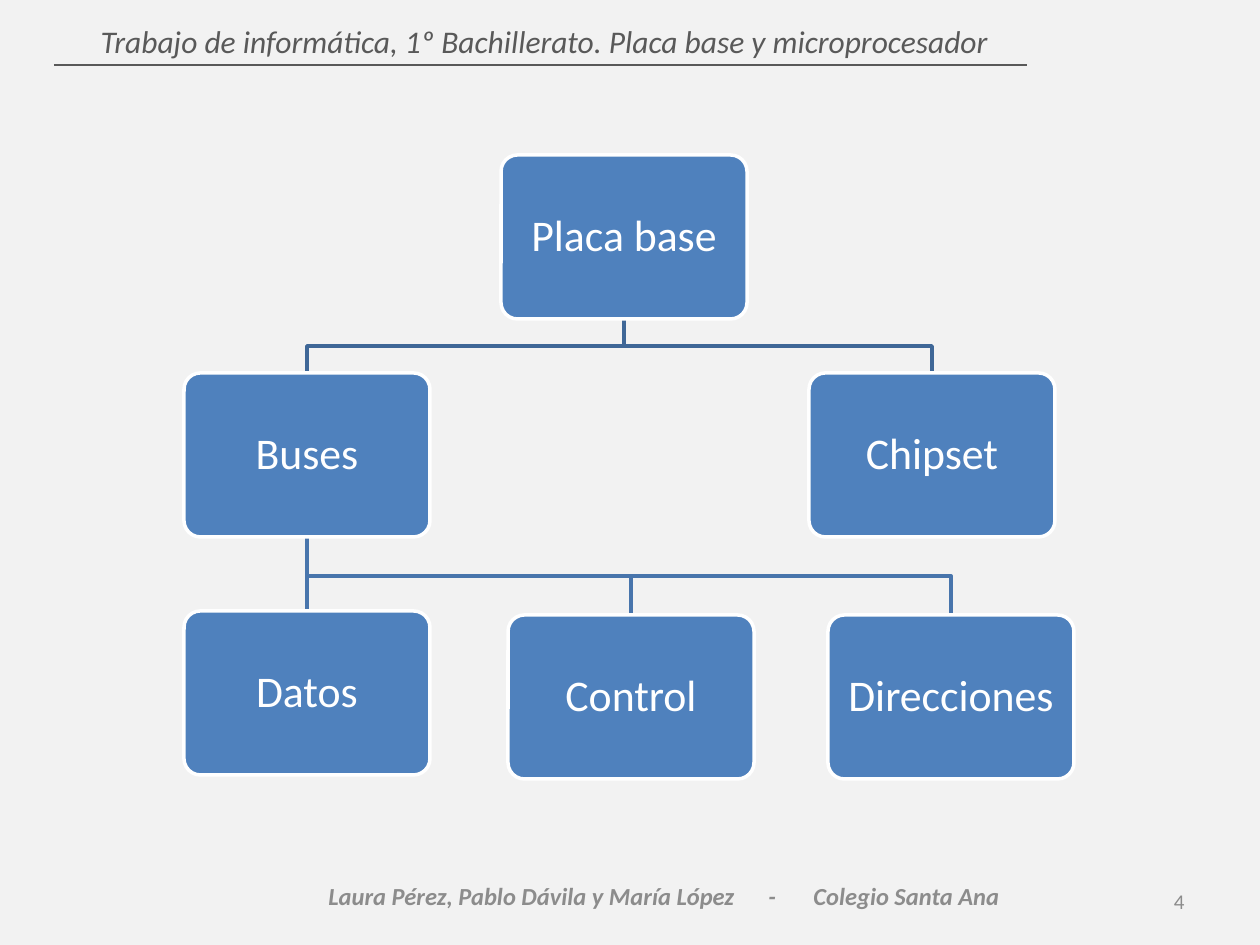
from dataclasses import dataclass

from lxml.etree import SubElement
from pptx import Presentation
from pptx.dml.color import RGBColor
from pptx.enum.shapes import MSO_CONNECTOR, MSO_SHAPE
from pptx.enum.text import MSO_ANCHOR, MSO_AUTO_SIZE, PP_ALIGN
from pptx.oxml import parse_xml
from pptx.oxml.ns import nsdecls, qn
from pptx.util import Emu, Pt


@dataclass(frozen=True)
class Theme:
    """Colours, font and type sizes of the slide."""
    font: str = "Calibri"
    back: str = "F2F2F2"
    node: str = "4F81BD"
    white: str = "FFFFFF"
    upper_link: str = "3F6797"
    lower_link: str = "4875AC"
    header: str = "595959"
    footer: str = "8C8C8C"
    node_size: int = 25
    header_size: int = 18
    footer_size: int = 14
    number_size: int = 12


T = Theme()
NODE_W, NODE_H = 246, 164
NODES = {
    "Placa base": (317, 0),
    "Buses": (0, 218),
    "Chipset": (625, 218),
    "Datos": (0, 456),
    "Control": (324, 460),
    "Direcciones": (644, 460),
}
LINKS = [
    ("Placa base", ("Buses", "Chipset"), T.upper_link),
    ("Buses", ("Datos", "Control", "Direcciones"), T.lower_link),
]


def px(n):
    """Turn pixels into EMU."""
    return Emu(round(n * 914400 / 126))


def rgb(color):
    """Turn a hex string into a colour."""
    return RGBColor.from_string(color)


def add_run(p, text, size, color, bold=False, italic=False):
    """Add one styled run to a paragraph."""
    r = p.add_run()
    r.text = text
    r.font.name, r.font.size = T.font, Pt(size)
    r.font.bold, r.font.italic = bold, italic
    r.font.color.rgb = rgb(color)


def set_line(shape, color, width):
    """Set a solid outline."""
    shape.line.color.rgb = rgb(color)
    shape.line.width = Pt(width)


def add_link(s, x1, y1, x2, y2, color):
    """Join a parent's foot to a child's head, bending halfway."""
    mid = (y1 + y2) / 2
    if x1 == x2:
        fb = s.shapes.build_freeform(px(x1 - 6), px(y1))
        fb.move_to(px(x1), px(y1))
        fb.add_line_segments([(px(x2), px(y2))], close=False)
        fb.move_to(px(x1 + 6), px(y2))
    else:
        fb = s.shapes.build_freeform(px(x1), px(y1))
        fb.add_line_segments([(px(x1), px(mid)), (px(x2), px(mid)), (px(x2), px(y2))],
                             close=False)
    sp = fb.convert_to_shape()
    sp.shadow.inherit = False
    sp.fill.background()
    set_line(sp, color, 2)


def add_node(s, x, y, label):
    """Draw one labelled box."""
    sp = s.shapes.add_shape(MSO_SHAPE.ROUNDED_RECTANGLE, px(x), px(y), px(NODE_W), px(NODE_H))
    sp.adjustments[0] = 0.1
    sp.shadow.inherit = False
    sp.fill.solid()
    sp.fill.fore_color.rgb = rgb(T.node)
    set_line(sp, T.white, 2)
    tf = sp.text_frame
    tf.word_wrap = True
    tf.vertical_anchor = MSO_ANCHOR.MIDDLE
    p = tf.paragraphs[0]
    p.alignment = PP_ALIGN.CENTER
    p.line_spacing = 0.9
    add_run(p, label, T.node_size, T.white)


def add_tree(s, x, y):
    """Draw the links, then the boxes, of the hierarchy."""
    for parent, children, color in LINKS:
        parent_x, parent_y = NODES[parent]
        for child in children:
            child_x, child_y = NODES[child]
            add_link(s, x + parent_x + NODE_W / 2, y + parent_y + NODE_H,
                     x + child_x + NODE_W / 2, y + child_y, color)
    for label, (dx, dy) in NODES.items():
        add_node(s, x + dx, y + dy, label)


def add_header(s, x, y, w, h):
    """Place the title and the rule under it."""
    title = s.shapes.title
    title.left, title.top, title.width, title.height = px(x), px(y), px(w), px(h)
    tf = title.text_frame
    tf.word_wrap = False
    tf.auto_size = MSO_AUTO_SIZE.SHAPE_TO_FIT_TEXT
    tf.vertical_anchor = MSO_ANCHOR.TOP
    p = tf.paragraphs[0]
    p.alignment = PP_ALIGN.LEFT
    add_run(p, "Trabajo de informática, 1º Bachillerato. Placa base y microprocesador",
            T.header_size, T.header, italic=True)
    rule = s.shapes.add_connector(MSO_CONNECTOR.STRAIGHT, px(x - 34), px(y + h - 1),
                                  px(x + w + 20), px(y + h - 1))
    SubElement(rule._element.spPr, qn("a:effectLst"))
    set_line(rule, T.header, 0.75)


def add_box(s, x, y, w, h):
    """Add a middle-anchored text box and return its paragraph."""
    tf = s.shapes.add_textbox(px(x), px(y), px(w), px(h)).text_frame
    tf.word_wrap = True
    tf.vertical_anchor = MSO_ANCHOR.MIDDLE
    return tf.paragraphs[0]


def add_footer(s, x, y, w, h):
    """Place the authors, the school and the slide number."""
    p = add_box(s, x, y, 704, h)
    tabs = SubElement(p._p.get_or_add_pPr(), qn("a:tabLst"))
    for stop in (440, 485):
        SubElement(tabs, qn("a:tab"), pos=str(px(stop)), algn="l")
    for text in ("Laura Pérez, Pablo Dávila y María López", "\t-", "\tColegio Santa Ana"):
        add_run(p, text, T.footer_size, T.footer, bold=True, italic=True)
    p = add_box(s, x + w - 294, y + 14, 294, 50)
    p.alignment = PP_ALIGN.RIGHT
    p._p.append(parse_xml(
        f'<a:fld {nsdecls("a")} id="{{B6F15528-21DE-4FAA-801E-634DDDAF4B2B}}" type="slidenum">'
        f'<a:rPr lang="es-ES" sz="{T.number_size * 100}"><a:solidFill>'
        f'<a:srgbClr val="{T.footer}"/></a:solidFill><a:latin typeface="{T.font}"/></a:rPr>'
        '<a:t>4</a:t></a:fld>'))


def main():
    """Build and save the slide."""
    prs = Presentation()
    prs.slide_width, prs.slide_height = px(1260), px(945)
    prs.element.set("firstSlideNum", "4")
    s = prs.slides.add_slide(prs.slide_layouts[5])
    s.background.fill.solid()
    s.background.fill.fore_color.rgb = rgb(T.back)
    add_header(s, 88, 16, 919, 50)
    add_tree(s, 184, 155)
    add_footer(s, 316, 862, 881, 67)
    prs.save("out.pptx")


if __name__ == "__main__":
    main()
